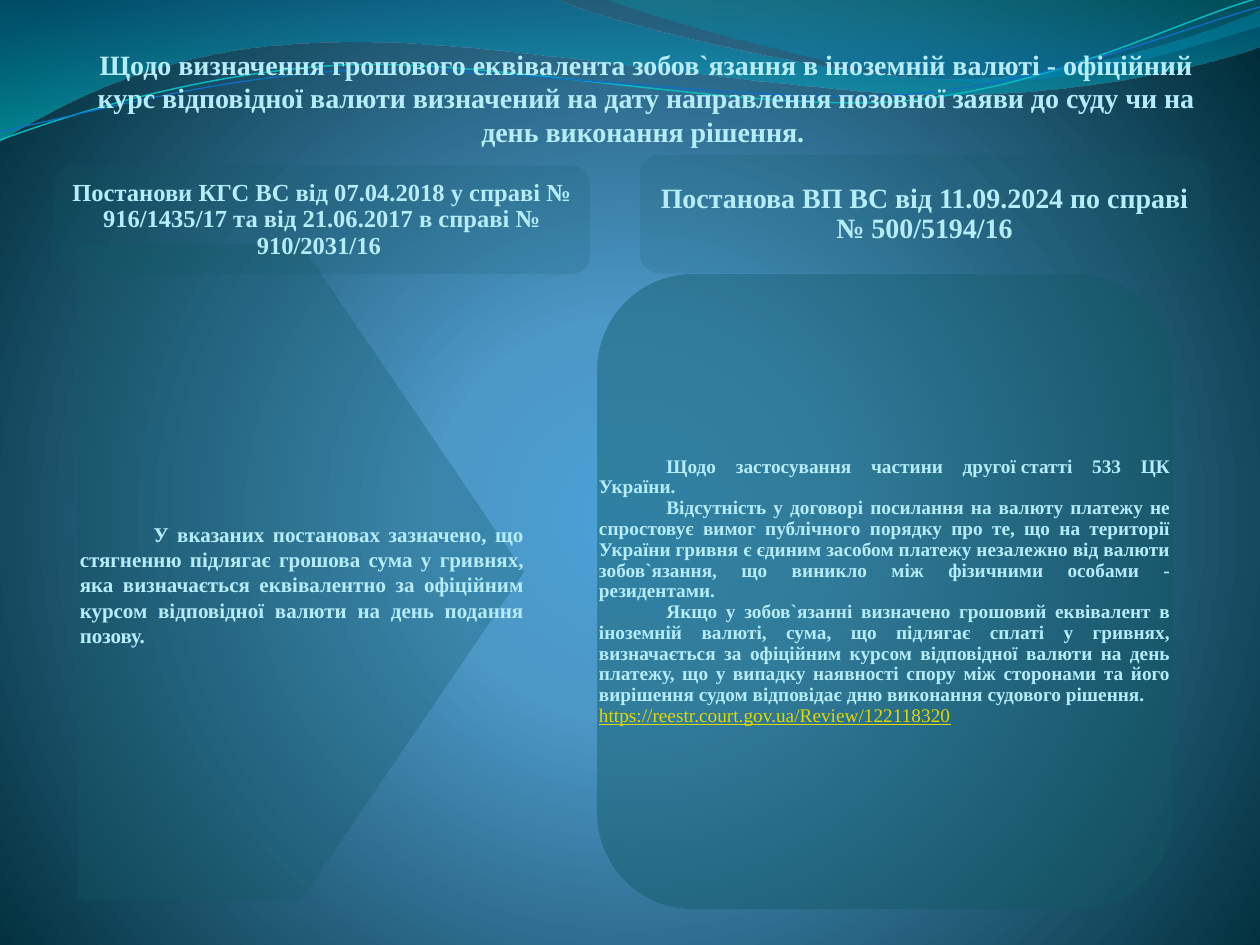
"""Build a slide comparing court rulings on debts in foreign currency."""
import pptx
import pptx.dml.color
import pptx.enum.shapes
import pptx.enum.text
import pptx.oxml
import pptx.oxml.ns
import pptx.util

Pt = pptx.util.Pt
Preset = pptx.enum.shapes.MSO_SHAPE
Align = pptx.enum.text.PP_ALIGN
Anchor = pptx.enum.text.MSO_ANCHOR
qn = pptx.oxml.ns.qn
NAMESPACE = pptx.oxml.ns.nsdecls("a")

COLORS = {"text": "B5EDFD", "panel": "115964", "link": "E2D700",
          "teal_line": "0AB8BF", "blue_line": "0F6FC6"}
FONT = "Times New Roman"
NBSP = chr(160)
BACKGROUND = [(0, "4AA0D6", 100), (25, "4C98C7", 100), (100, "002C38", 100)]
RADIAL = '<a:path path="circle"><a:fillToRect l="10000" t="110000" r="10000" b="100000"/></a:path>'
DOWNWARD = '<a:lin ang="5400000" scaled="0"/>'

WAVES = [
    ([(0, 0), (317, -1), (343, 12, 478, 45, 546, 45), (614, 45, 690, 19, 720, 6),
      (721, 26), (708, 32, 626, 55, 537, 54), (448, 54, 275, 20, 185, 24),
      (93, 26, 33, 60, -1, 81)],
     [(0, "0074A1", 45), (100, "00C6CF", 55)]),
    ([(345, -1), (366, 8, 491, 45, 554, 47), (616, 50, 692, 23, 720, 15), (720, 0)],
     [(0, "00A1A9", 30), (80, "008BBF", 45)]),
]
RIBBONS = [
    ([(0, 80), (35, 67, 114, 41, 199, 37), (284, 34, 427, 64, 513, 58),
      (600, 51, 675, 11, 719, -1)], "teal_line", 0.85),
    ([(0, 75), (34, 69, 118, 44, 204, 40), (290, 37, 430, 60, 516, 54),
      (602, 48, 678, 15, 720, 4)], "blue_line", 0.75),
]

LINK = "https://reestr.court.gov.ua/Review/122118320"
BLOCKS = [
    {"idx": 0, "box": (48.2, 15.1, 643.7, 141.8), "size": 16, "align": Align.CENTER,
     "spacing": 1, "insets": (0, 0, 1.4, 72.4), "indent": 0, "anchor": Anchor.BOTTOM,
     "text": ["Щодо визначення грошового еквівалента зобов`язання в іноземній валюті - офіційний курс відповідної валюти визначений на дату направлення позовної заяви до суду чи на день виконання рішення. "]},
    {"idx": 2, "box": (44.6, 139.7, 254.9, 374.4), "size": 12, "align": Align.JUSTIFY,
     "spacing": 1, "insets": (1, 15, 0, 0.7), "indent": 42,
     "panel": (Preset.PENTAGON, 29),
     "text": ["У вказаних постановах зазначено, що стягненню підлягає грошова сума у гривнях, яка визначається еквівалентно за офіційним курсом відповідної валюти на день подання позову."]},
    {"idx": 4, "box": (341.3, 156.6, 329, 362.9), "size": 11, "align": Align.JUSTIFY,
     "spacing": 0.9, "insets": (1, 1.4, 1.4, 1.4), "indent": 38.5,
     "panel": (Preset.FLOWCHART_ALTERNATE_PROCESS, 44),
     "text": [f"Щодо застосування частини другої{NBSP}статті 533 ЦК України.",
              "Відсутність у договорі посилання на валюту платежу не спростовує вимог публічного порядку про те, що на території України гривня є єдиним засобом платежу незалежно від валюти зобов`язання, що виникло між фізичними особами - резидентами.",
              "Якщо у зобов`язанні визначено грошовий еквівалент в іноземній валюті, сума, що підлягає сплаті у гривнях, визначається за офіційним курсом відповідної валюти на день платежу, що у випадку наявності спору між сторонами та його вирішення судом відповідає дню виконання судового рішення.",
              LINK]},
    {"idx": 1, "box": (31, 94.6, 306, 62), "size": 14, "align": Align.CENTER,
     "spacing": 0.9, "insets": (4.3,) * 4, "indent": 0,
     "panel": (Preset.ROUNDED_RECTANGLE, 17),
     "text": [f"Постанови КГС ВС від 07.04.2018 у справі № 916/1435/17 та від{NBSP}21.06.2017 в справі № 910/2031/16 "]},
    {"idx": 3, "box": (365.6, 88.6, 325.4, 67.7), "size": 16, "align": Align.CENTER,
     "spacing": 0.9, "insets": (5,) * 4, "indent": 0,
     "panel": (Preset.ROUNDED_RECTANGLE, 16),
     "text": [f"Постанова ВП ВС від 11.09.2024 по справі №{NBSP}500/5194/16"]},
]


def set_attributes(target, values):
    for name, value in values.items():
        setattr(target, name, value)


def rgb(name):
    return pptx.dml.color.RGBColor.from_string(COLORS[name])


def set_gradient(fill, root, stops, direction):
    fill.solid()
    solid = next(root.iter(qn("a:solidFill")))
    marks = "".join(
        f'<a:gs pos="{position * 1000}"><a:srgbClr val="{color}">'
        f'<a:alpha val="{alpha * 1000}"/></a:srgbClr></a:gs>'
        for position, color, alpha in stops)
    gradient = pptx.oxml.parse_xml(
        f'<a:gradFill {NAMESPACE} rotWithShape="1">'
        f'<a:gsLst>{marks}</a:gsLst>{direction}</a:gradFill>')
    solid.getparent().replace(solid, gradient)


def add_outline(slide, segments, close):
    ends = [segment[-2:] for segment in segments]
    left, top = (min(values) for values in zip(*ends))
    builder = slide.shapes.build_freeform(*ends[0], scale=Pt(1))
    builder.add_line_segments(ends[1:], close=close)
    shape = builder.convert_to_shape()
    shape.shadow.inherit = False
    lines = list(shape._element.iter(qn("a:lnTo")))
    for line, segment in zip(lines, segments[1:]):
        if len(segment) == 6:
            points = "".join(f'<a:pt x="{x - left}" y="{y - top}"/>'
                             for x, y in zip(segment[::2], segment[1::2]))
            curve = pptx.oxml.parse_xml(
                f'<a:cubicBezTo {NAMESPACE}>{points}</a:cubicBezTo>')
            line.getparent().replace(line, curve)
    return shape


def add_panel(slide, box, preset, alpha):
    shape = slide.shapes.add_shape(preset, *map(Pt, box))
    shape.shadow.inherit = False
    shape.fill.solid()
    shape.fill.fore_color.rgb = rgb("panel")
    shape.line.fill.background()
    color = next(shape._element.spPr.iter(qn("a:srgbClr")))
    color.append(pptx.oxml.parse_xml(f'<a:alpha {NAMESPACE} val="{alpha * 1000}"/>'))


def fill_placeholder(slide, block):
    shape = next(item for item in slide.placeholders
                 if item.placeholder_format.idx == block["idx"])
    set_attributes(shape, dict(zip(("left", "top", "width", "height"), map(Pt, block["box"]))))
    frame = shape.text_frame
    margins = ("margin_left", "margin_top", "margin_right", "margin_bottom")
    set_attributes(frame, dict(zip(margins, map(Pt, block["insets"]))))
    set_attributes(frame, {"word_wrap": True,
                           "vertical_anchor": block.get("anchor", Anchor.MIDDLE),
                           "auto_size": pptx.enum.text.MSO_AUTO_SIZE.NONE})
    for number, text in enumerate(block["text"]):
        paragraph = frame.add_paragraph() if number else frame.paragraphs[0]
        set_attributes(paragraph, {"alignment": block["align"], "space_before": Pt(0),
                                   "space_after": Pt(0), "line_spacing": block["spacing"]})
        is_link = text == LINK
        properties = paragraph._p.get_or_add_pPr()
        properties.set("marL", "0")
        properties.set("indent", str(0 if is_link else Pt(block["indent"])))
        properties.append(pptx.oxml.parse_xml(f'<a:buNone {NAMESPACE}/>'))
        run = paragraph.add_run()
        run.text = text
        set_attributes(run.font, {"name": FONT, "size": Pt(block["size"]),
                                  "bold": not is_link, "underline": is_link})
        run.font.color.rgb = rgb("link" if is_link else "text")
    slide.shapes._spTree.append(shape._element)


def main():
    presentation = pptx.Presentation()
    set_attributes(presentation, {"slide_width": Pt(720), "slide_height": Pt(540)})
    slide = presentation.slides.add_slide(presentation.slide_layouts.get_by_name("Comparison"))
    set_gradient(slide.background.fill, slide._element, BACKGROUND, RADIAL)
    for segments, stops in WAVES:
        wave = add_outline(slide, segments, True)
        wave.line.fill.background()
        set_gradient(wave.fill, wave._element.spPr, stops, DOWNWARD)
    for segments, color, width in RIBBONS:
        ribbon = add_outline(slide, segments, False)
        ribbon.fill.background()
        ribbon.line.color.rgb = rgb(color)
        ribbon.line.width = Pt(width)
    for block in BLOCKS:
        if "panel" in block:
            add_panel(slide, block["box"], *block["panel"])
        fill_placeholder(slide, block)
    presentation.save("out.pptx")


if __name__ == "__main__":
    main()
